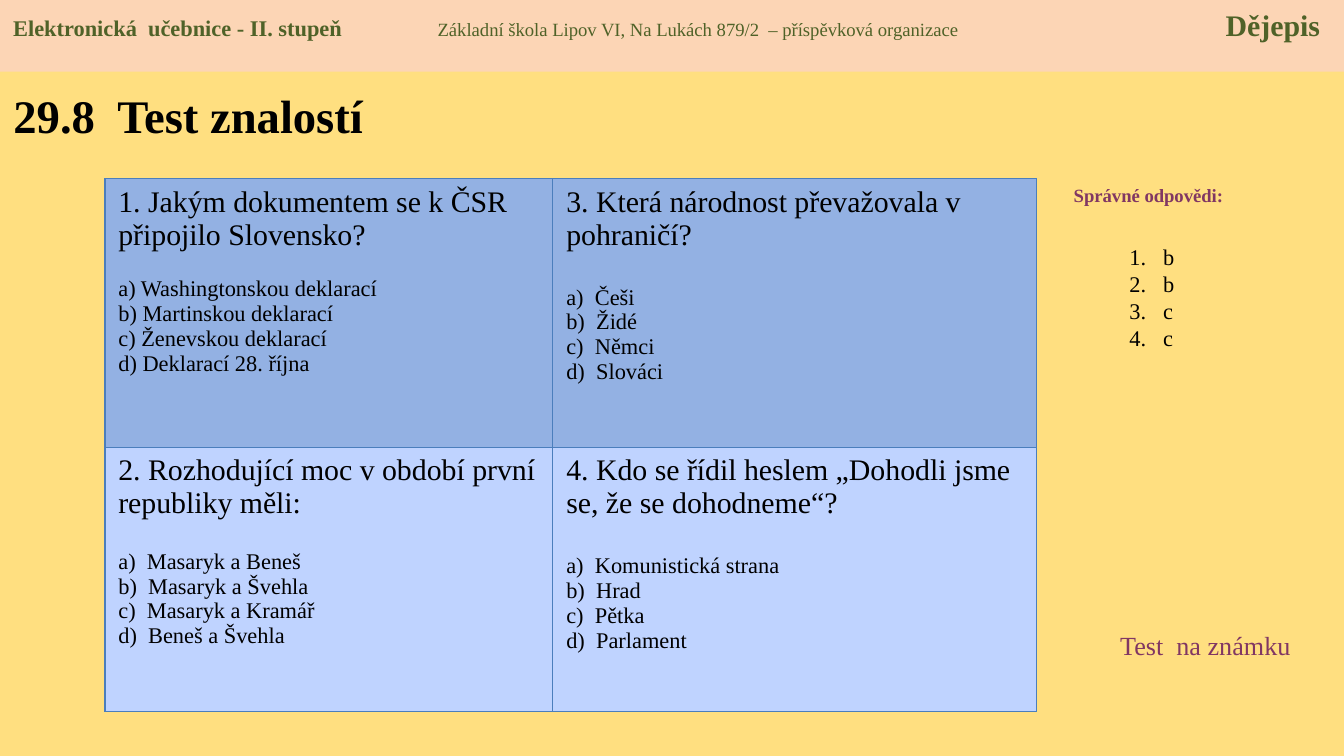
from dataclasses import dataclass

from lxml import etree
from pptx import Presentation
from pptx import util as u
from pptx.dml.color import RGBColor
from pptx.enum import shapes, text
from pptx.oxml import ns

Pt = u.Pt


@dataclass(frozen=True)
class Theme:
    font: str = "Times New Roman"
    page: str = "FFDF80"
    band: str = "FCD5B5"
    rows: tuple = ("93B1E3", "BFD3FF")
    border: str = "4B7EBC"
    ink: str = "000000"
    green: str = "4F6228"
    plum: str = "813763"
    title: int = 25
    large: int = 16
    medium: int = 14
    body: int = 12
    small: int = 10


T = Theme()
LINE = 1.11  # line height per point of type

# Question, answers, type size of the gap line between them
QUIZ = [
    [("1. Jakým dokumentem se k ČSR připojilo Slovensko?",
      ["a) Washingtonskou deklarací", "b) Martinskou deklarací",
       "c) Ženevskou deklarací", "d) Deklarací 28. října"], T.body),
     ("3. Která národnost převažovala v pohraničí?",
      ["a)  Češi", "b)  Židé", "c)  Němci", "d)  Slováci"], T.large)],
    [("2. Rozhodující moc v období první republiky měli:",
      ["a)  Masaryk a Beneš", "b)  Masaryk a Švehla",
       "c)  Masaryk a Kramář", "d)  Beneš a Švehla"], T.medium),
     ("4. Kdo se řídil heslem „Dohodli jsme se, že se dohodneme“?",
      ["a)  Komunistická strana", "b)  Hrad", "c)  Pětka", "d)  Parlament"],
      T.large)],
]


def set_attrs(obj, formats):
    for name, value in formats.items():
        setattr(obj, name, value)


def add_run(p, words, size, color=T.ink, bold=False):
    r = p.add_run()
    r.text = words
    set_attrs(r.font, {"name": T.font, "size": Pt(size), "bold": bold})
    r.font.color.rgb = RGBColor.from_string(color)


def next_paragraph(tf, first):
    return tf.paragraphs[0] if first else tf.add_paragraph()


def hang(p, indent):
    pPr = p._p.get_or_add_pPr()
    pPr.set("marL", str(Pt(indent)))
    pPr.set("indent", str(-Pt(indent)))
    return pPr


def add_title(s, words):
    sp = s.shapes.title
    set_attrs(sp, {"left": Pt(0), "top": Pt(38.2), "width": Pt(280.8), "height": Pt(46.8)})
    tf = sp.text_frame
    set_attrs(tf, {"word_wrap": True, "auto_size": text.MSO_AUTO_SIZE.NONE,
                   "vertical_anchor": text.MSO_ANCHOR.MIDDLE})
    p = tf.paragraphs[0]
    p.alignment = text.PP_ALIGN.LEFT
    add_run(p, words, T.title, bold=True)


def add_text(s, box):
    tf = s.shapes.add_textbox(*map(Pt, box)).text_frame
    tf.word_wrap = True
    return tf


def add_label(s, box, words, size, bold=False, align=text.PP_ALIGN.LEFT):
    p = add_text(s, box).paragraphs[0]
    p.alignment = align
    add_run(p, words, size, T.plum, bold)


def add_key(s, box, letters):
    tf = add_text(s, box)
    tf.margin_top = Pt(18.5)
    for i, letter in enumerate(letters):
        p = next_paragraph(tf, i == 0)
        p.line_spacing = Pt(14.5)
        etree.SubElement(hang(p, 18), ns.qn("a:buAutoNum"), type="arabicPeriod")
        add_run(p, letter, T.body)


def add_borders(cell):
    tcPr = cell._tc.get_or_add_tcPr()
    for i, side in enumerate(("lnL", "lnR", "lnT", "lnB")):
        ln = etree.Element(ns.qn("a:" + side), w=str(Pt(0.75)))
        fill = etree.SubElement(ln, ns.qn("a:solidFill"))
        etree.SubElement(fill, ns.qn("a:srgbClr"), val=T.border)
        tcPr.insert(i, ln)


def fill_cell(cell, question, answers, gap, color):
    cell.fill.solid()
    cell.fill.fore_color.rgb = RGBColor.from_string(color)
    add_borders(cell)
    tf = cell.text_frame
    add_run(tf.paragraphs[0], question, T.large)
    for i, answer in enumerate(answers):
        p = tf.add_paragraph()
        hang(p, 27)
        if i == 0:
            p.space_before = Pt(gap * LINE)
        add_run(p, answer, T.body)


def add_quiz(s, left, top, widths, heights):
    box = (left, top, sum(widths), sum(heights))
    table = s.shapes.add_table(len(heights), len(widths), *map(Pt, box)).table
    for column, width in zip(table.columns, widths):
        column.width = Pt(width)
    for i, height in enumerate(heights):
        table.rows[i].height = Pt(height)
        for j, entry in enumerate(QUIZ[i]):
            fill_cell(table.cell(i, j), *entry, T.rows[i])


def add_band(s, box, parts, stops):
    sp = s.shapes.add_shape(shapes.MSO_SHAPE.RECTANGLE, *map(Pt, box))
    sp.shadow.inherit = False
    sp.fill.solid()
    sp.fill.fore_color.rgb = RGBColor.from_string(T.band)
    sp.line.fill.background()
    tf = sp.text_frame
    set_attrs(tf, {"word_wrap": True, "vertical_anchor": text.MSO_ANCHOR.TOP})
    p = tf.paragraphs[0]
    p.alignment = text.PP_ALIGN.LEFT
    tabs = etree.SubElement(p._p.get_or_add_pPr(), ns.qn("a:tabLst"))
    for stop in stops:
        etree.SubElement(tabs, ns.qn("a:tab"), pos=str(Pt(stop)), algn="l")
    for i, (words, size, bold) in enumerate(parts):
        add_run(p, ("\t" if i else "") + words, size, T.green, bold)


def main():
    prs = Presentation()
    set_attrs(prs, {"slide_width": Pt(720), "slide_height": Pt(405)})
    s = prs.slides.add_slide(prs.slide_layouts[5])
    s.background.fill.solid()
    s.background.fill.fore_color.rgb = RGBColor.from_string(T.page)

    # Title and quiz
    add_title(s, "29.8  Test znalostí")
    add_quiz(s, 56.2, 95.8, (240, 259), (143.8, 141.6))

    # Right column: answer key and note
    add_label(s, (558.7, 95, 113, 19.4), "Správné odpovědi:", T.small, True,
              text.PP_ALIGN.CENTER)
    add_key(s, (598, 111.6, 39.6, 94.3), "bbcc")
    add_label(s, (593, 333.4, 113, 24.5), "Test  na známku", T.medium)

    # Header band
    add_band(s, (0, 0, 720, 38.5),
             [("Elektronická  učebnice - II. stupeň", T.body, True),
              ("Základní škola Lipov VI, Na Lukách 879/2  – příspěvková organizace",
               T.small, False),
              ("Dějepis", T.large, True)],
             (227.4, 649.6))
    prs.save("out.pptx")


if __name__ == "__main__":
    main()
